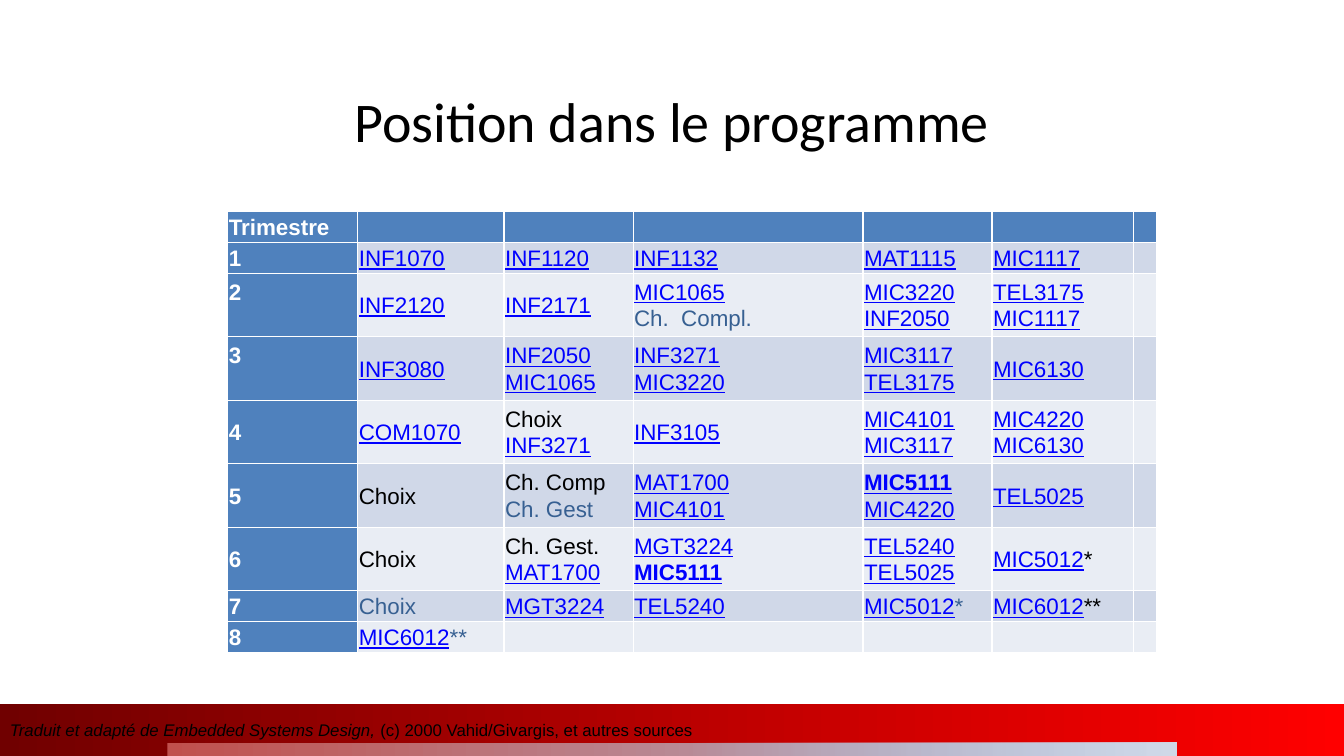
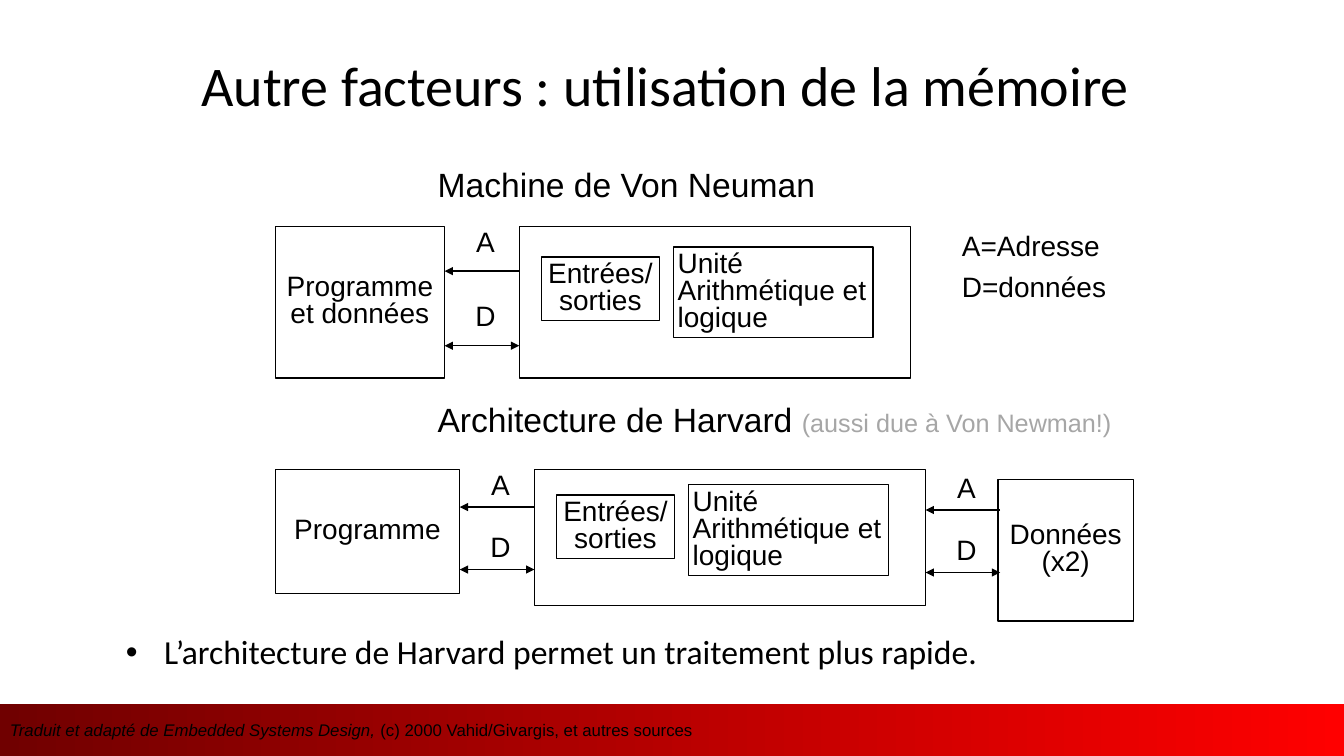
from dataclasses import dataclass

from lxml.etree import SubElement
from pptx import Presentation
from pptx.dml.color import RGBColor
from pptx.enum.shapes import MSO_CONNECTOR as Connector
from pptx.enum.shapes import MSO_SHAPE as Preset
from pptx.enum.text import MSO_ANCHOR as Anchor
from pptx.enum.text import PP_ALIGN as Align
from pptx.oxml.ns import qn
from pptx.shapes.autoshape import Shape
from pptx.slide import Slide
from pptx.text.text import Font, TextFrame, _Paragraph as Paragraph
from pptx.util import Inches, Pt

COLORS = {
    "ink": "000000",
    "white": "FFFFFF",
    "link": "0000FF",
    "choice": "376092",
    "muted": "A6A6A6",
    "header": "4F81BD",
    "band_dark": "D0D8E8",
    "band_light": "E9EDF4",
    "footer_start": "700000",
    "footer_end": "FF0000",
    "strip_start": "C0504D",
    "strip_end": "B2C1DB",
    "glow": "D1DAE9",
}
BODY_FONT = "Arial"
TITLE_FONT = "Calibri"


@dataclass(frozen=True)
class Frame:
    left: float
    top: float
    width: float
    height: float

    def lengths(self) -> tuple[Inches, Inches, Inches, Inches]:
        return Inches(self.left), Inches(self.top), Inches(self.width), Inches(self.height)


@dataclass(frozen=True)
class Entry:
    course: str = ""
    note: str = ""
    color: str = "ink"
    bold: bool = False


@dataclass(frozen=True)
class Box:
    frame: Frame
    text: str = ""
    align: Align = Align.CENTER


@dataclass(frozen=True)
class Processor:
    frame: Frame
    ports_offset: float


@dataclass(frozen=True)
class Bus:
    left: float
    top: float
    drop: float
    step: float


Cell = str | tuple[Entry, ...]

COLUMN_WIDTHS = (1.29, 1.45, 1.28, 2.28, 1.28, 1.4, 0.23)
SINGLE_ROW, DOUBLE_ROW = 0.29, 0.63
CHOICE = (Entry(note="Choix"),)
TERMS: tuple[tuple[Cell, ...], ...] = (
    ("INF1070", "INF1120", "INF1132", "MAT1115", "MIC1117"),
    ("INF2120", "INF2171", (Entry("MIC1065"), Entry(note="Ch.  Compl.", color="choice")),
     "MIC3220 INF2050", "TEL3175 MIC1117"),
    ("INF3080", "INF2050 MIC1065", "INF3271 MIC3220", "MIC3117 TEL3175", "MIC6130"),
    ("COM1070", (Entry(note="Choix"), Entry("INF3271")), "INF3105",
     "MIC4101 MIC3117", "MIC4220 MIC6130"),
    (CHOICE, (Entry(note="Ch. Comp"), Entry(note="Ch. Gest", color="choice")),
     "MAT1700 MIC4101", (Entry("MIC5111", bold=True), Entry("MIC4220")), "TEL5025"),
    (CHOICE, (Entry(note="Ch. Gest."), Entry("MAT1700")),
     (Entry("MGT3224"), Entry("MIC5111", bold=True)), "TEL5240 TEL5025",
     (Entry("MIC5012", "*"),)),
    ((Entry(note="Choix", color="choice"),), "MGT3224", "TEL5240",
     (Entry("MIC5012", "*", "choice"),), (Entry("MIC6012", "**"),)),
    ((Entry("MIC6012", "**", "choice"),),),
)
TOP_ANCHORED_TERMS = (2, 3)

MEMORIES = (
    Box(Frame(2.73, 2.25, 1.68, 1.5), "Programme et données"),
    Box(Frame(2.73, 4.66, 1.83, 1.23), "Programme"),
    Box(Frame(9.9, 4.76, 1.34, 1.4), "Données (x2)"),
)
PROCESSORS = (
    Processor(Frame(5.15, 2.25, 3.88, 1.5), 0.3),
    Processor(Frame(5.3, 4.66, 3.88, 1.35), 0.25),
)
BUSES = (
    Bus(4.41, 2.25, 0.44, 0.74),
    Bus(4.56, 4.66, 0.37, 0.62),
    Bus(9.18, 4.69, 0.37, 0.62),
)
BUS_LENGTH = 0.74


def rgb(name: str) -> RGBColor:
    return RGBColor.from_string(COLORS[name])


def style_font(font: Font, size: float, color: str = "ink", name: str = BODY_FONT) -> None:
    font.size = Pt(size)
    font.name = name
    font.color.rgb = rgb(color)


def set_margins(target: TextFrame, margin: float) -> None:
    target.margin_left = target.margin_right = Inches(margin)
    target.margin_top = target.margin_bottom = Inches(margin)


def add_rectangle(slide: Slide, frame: Frame) -> Shape:
    shape = slide.shapes.add_shape(Preset.RECTANGLE, *frame.lengths())
    shape.shadow.inherit = False
    return shape


def add_gradient(slide: Slide, frame: Frame, start: str, end: str) -> Shape:
    shape = add_rectangle(slide, frame)
    shape.line.fill.background()
    shape.fill.gradient()
    shape.fill.gradient_angle = 0
    for stop, color in zip(shape.fill.gradient_stops, (start, end)):
        stop.color.rgb = rgb(color)
    return shape


def add_text(slide: Slide, frame: Frame) -> TextFrame:
    text_frame = slide.shapes.add_textbox(*frame.lengths()).text_frame
    text_frame.word_wrap = True
    return text_frame


def add_title(slide: Slide, frame: Frame, text: str, spacing: float = 1.0) -> None:
    text_frame = add_text(slide, frame)
    text_frame.vertical_anchor = Anchor.MIDDLE
    paragraph = text_frame.paragraphs[0]
    paragraph.text = text
    paragraph.alignment = Align.CENTER
    paragraph.line_spacing = spacing
    style_font(paragraph.font, 40, name=TITLE_FONT)


def add_footer(slide: Slide) -> None:
    band = add_gradient(slide, Frame(0, 6.98, 13.33, 0.52), "footer_start", "footer_end")
    text_frame = band.text_frame
    text_frame.word_wrap = False
    text_frame.vertical_anchor = Anchor.MIDDLE
    paragraph = text_frame.paragraphs[0]
    paragraph.alignment = Align.LEFT
    for text, italic in (
        ("Traduit et adapté de Embedded Systems Design,", True),
        (" (c) 2000 Vahid/Givargis, et autres sources", False),
    ):
        run = paragraph.add_run()
        run.text = text
        style_font(run.font, 12)
        run.font.italic = italic


def add_strips(slide: Slide) -> None:
    add_gradient(slide, Frame(1.66, 7.37, 10.01, 0.13), "strip_start", "strip_end")
    glow = add_gradient(slide, Frame(6.81, 7.37, 4.86, 0.13), "strip_end", "glow")
    first_color = next(glow.element.iter(qn("a:srgbClr")))
    SubElement(first_color, qn("a:alpha"), val="0")


def add_cell_run(paragraph: Paragraph, text: str, color: str, bold: bool = False,
                 underline: bool = False) -> None:
    run = paragraph.add_run()
    run.text = text
    style_font(run.font, 16, color)
    run.font.bold = bold
    run.font.underline = underline


def entries_of(cell: Cell) -> tuple[Entry, ...]:
    return tuple(Entry(course) for course in cell.split()) if isinstance(cell, str) else cell


def add_program_table(slide: Slide) -> None:
    labels = ("Trimestre", *(str(term) for term in range(1, len(TERMS) + 1)))
    rows = ((), *TERMS)
    frame = Frame(2.26, 2.1, sum(COLUMN_WIDTHS), 4.39)
    table = slide.shapes.add_table(len(rows), len(COLUMN_WIDTHS), *frame.lengths()).table
    for column, width in zip(table.columns, COLUMN_WIDTHS):
        column.width = Inches(width)
    for row_index, (label, courses) in enumerate(zip(labels, rows)):
        contents = [entries_of(cell) for cell in courses]
        is_double = any(len(entries) > 1 for entries in contents)
        table.rows[row_index].height = Inches(DOUBLE_ROW if is_double else SINGLE_ROW)
        band = "band_dark" if row_index % 2 else "band_light"
        for column_index in range(len(COLUMN_WIDTHS)):
            cell = table.cell(row_index, column_index)
            is_header = row_index == 0 or column_index == 0
            cell.fill.solid()
            cell.fill.fore_color.rgb = rgb("header" if is_header else band)
            cell.vertical_anchor = Anchor.MIDDLE
            set_margins(cell, 0.01)
            text_frame = cell.text_frame
            text_frame.paragraphs[0].font.size = Pt(16)
            if column_index == 0:
                text_frame.paragraphs[0].line_spacing = 1.07
                add_cell_run(text_frame.paragraphs[0], label, "white", bold=True)
                if row_index in TOP_ANCHORED_TERMS:
                    cell.vertical_anchor = Anchor.TOP
                    cell.margin_top = Inches(0.05)
            elif column_index <= len(contents):
                for index, entry in enumerate(contents[column_index - 1]):
                    paragraph = text_frame.add_paragraph() if index else text_frame.paragraphs[0]
                    paragraph.line_spacing = 1.07
                    if entry.course:
                        add_cell_run(paragraph, entry.course, "link", entry.bold, True)
                    if entry.note:
                        add_cell_run(paragraph, entry.note, entry.color)


def style_diagram_text(text_frame: TextFrame, text: str, align: Align = Align.LEFT,
                       size: float = 20) -> None:
    text_frame.word_wrap = True
    set_margins(text_frame, 0.04)
    text_frame.text = text
    for paragraph in text_frame.paragraphs:
        paragraph.alignment = align
        paragraph.line_spacing = 0.8
        paragraph.space_before = Pt(size / 2)
        style_font(paragraph.font, size)


def add_box(slide: Slide, box: Box) -> None:
    shape = add_rectangle(slide, box.frame)
    shape.fill.background()
    shape.line.color.rgb = rgb("ink")
    shape.line.width = Pt(1)
    if box.text:
        shape.text_frame.vertical_anchor = Anchor.MIDDLE
        style_diagram_text(shape.text_frame, box.text, box.align)


def add_processor(slide: Slide, processor: Processor) -> None:
    left, top = processor.frame.left, processor.frame.top + processor.ports_offset
    add_box(slide, Box(processor.frame))
    add_box(slide, Box(Frame(left + 0.22, top, 1.17, 0.63), "Entrées/sorties"))
    add_box(slide, Box(Frame(left + 1.53, top - 0.1, 1.98, 0.9),
                       "Unité Arithmétique et logique", Align.LEFT))


def add_arrow(slide: Slide, left: float, y: float, both_ends: bool) -> None:
    connector = slide.shapes.add_connector(
        Connector.STRAIGHT, Inches(left + BUS_LENGTH), Inches(y), Inches(left), Inches(y))
    connector.line.color.rgb = rgb("ink")
    connector.line.width = Pt(1)
    line = connector.line._get_or_add_ln()
    for end in ("a:headEnd", "a:tailEnd") if both_ends else ("a:tailEnd",):
        SubElement(line, qn(end), type="triangle")
    SubElement(connector.element.spPr, qn("a:effectLst"))


def add_bus(slide: Slide, bus: Bus) -> None:
    for index, label in enumerate("AD"):
        top = bus.top + index * bus.step
        style_diagram_text(add_text(slide, Frame(bus.left + 0.22, top, 0.37, 0.35)),
                           label, Align.CENTER)
        add_arrow(slide, bus.left, top + bus.drop, both_ends=label == "D")


def add_conclusion(slide: Slide, text: str) -> None:
    paragraph = add_text(slide, Frame(1.15, 6.26, 10.37, 0.63)).paragraphs[0]
    paragraph.text = text
    paragraph.line_spacing = 0.9
    properties = paragraph._p.get_or_add_pPr()
    properties.set("marL", str(Inches(0.38)))
    properties.set("indent", str(Inches(-0.38)))
    SubElement(properties, qn("a:buFont"), typeface=BODY_FONT)
    SubElement(properties, qn("a:buChar"), char="•")
    style_font(paragraph.font, 24, name=TITLE_FONT)


def build_program_slide(slide: Slide) -> None:
    add_footer(slide)
    add_title(slide, Frame(1.15, 0.35, 11.02, 1.77), "Position dans le programme", 0.9)
    add_strips(slide)
    add_program_table(slide)


def build_memory_slide(slide: Slide) -> None:
    add_footer(slide)
    add_title(slide, Frame(1.15, 0.21, 11.02, 1.25), "Autre facteurs : utilisation de la mémoire ")
    for processor in PROCESSORS:
        add_processor(slide, processor)
    for memory in MEMORIES:
        add_box(slide, memory)
    for bus in BUSES:
        add_bus(slide, bus)
    style_diagram_text(add_text(slide, Frame(9.5, 2.29, 1.81, 0.78)), "A=Adresse\nD=données")
    style_diagram_text(add_text(slide, Frame(4.3, 1.66, 4.41, 0.4)),
                       "Machine de Von Neuman", size=24)
    harvard = add_text(slide, Frame(4.3, 3.99, 7.25, 0.4))
    style_diagram_text(harvard, "Architecture de Harvard ", size=24)
    remark = harvard.paragraphs[0].add_run()
    remark.text = "(aussi due à Von Newman!)"
    style_font(remark.font, 18, "muted")
    add_conclusion(slide, "L’architecture de Harvard permet un traitement plus rapide.")


def main() -> None:
    presentation = Presentation()
    presentation.slide_width, presentation.slide_height = Inches(13.33), Inches(7.5)
    blank = presentation.slide_layouts[6]
    for build in (build_program_slide, build_memory_slide):
        build(presentation.slides.add_slide(blank))
    presentation.save("out.pptx")


if __name__ == "__main__":
    main()
